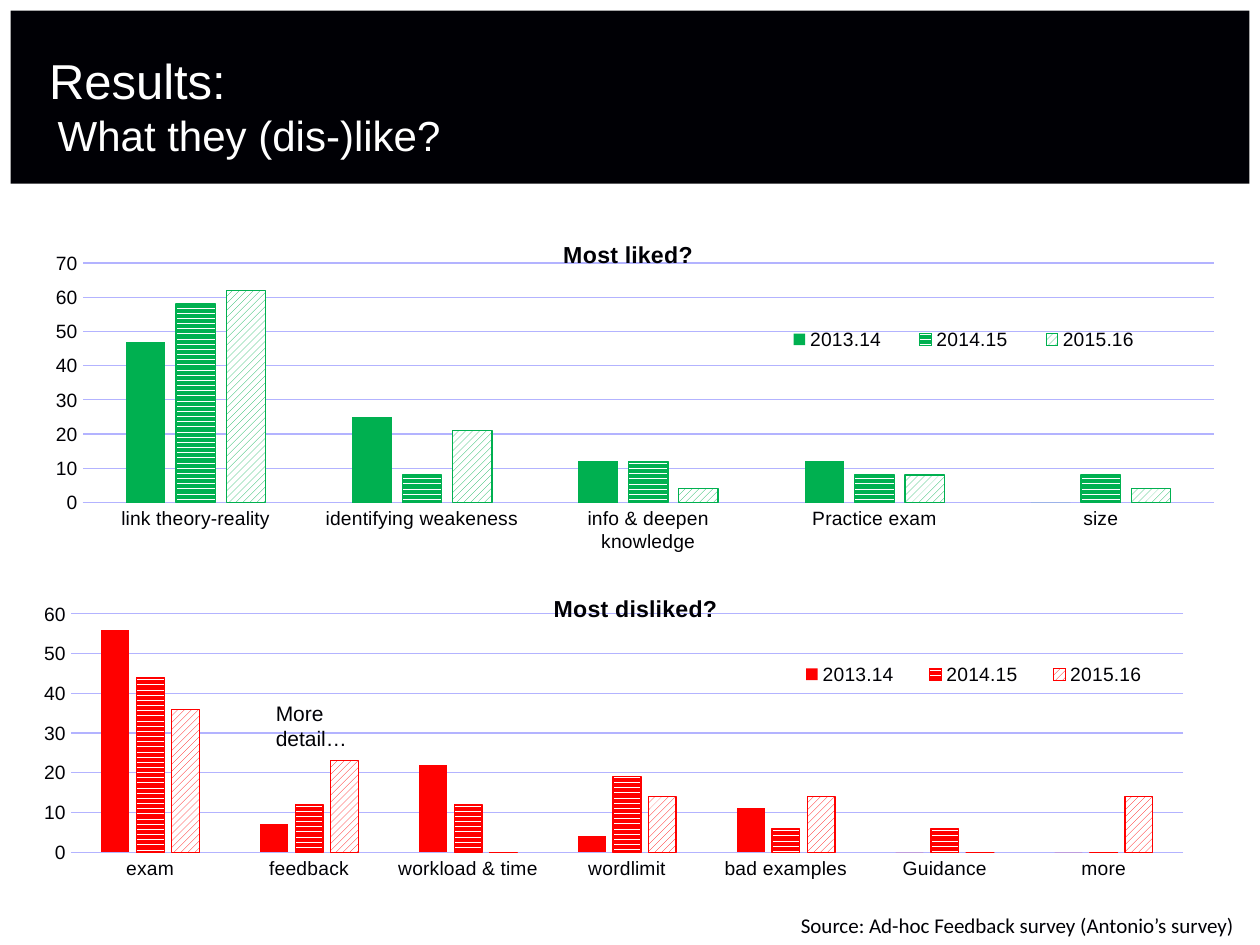
from lxml import etree
from pptx import Presentation
from pptx.chart.data import CategoryChartData
from pptx.dml.color import RGBColor
from pptx.enum import chart as ch, dml, shapes, text
from pptx.oxml.ns import qn
from pptx.util import Pt

INK = RGBColor(0x00, 0x00, 0x05)
WHITE = RGBColor(0xFF, 0xFF, 0xFF)
GRID = RGBColor(0xB3, 0xB3, 0xFF)
GREEN = RGBColor(0x00, 0xB0, 0x50)
RED = RGBColor(0xFF, 0x00, 0x00)

YEARS = ("2013.14", "2014.15", "2015.16")
PATTERNS = (None, dml.MSO_PATTERN.DARK_HORIZONTAL,
            dml.MSO_PATTERN.WIDE_UPWARD_DIAGONAL)
LIKED = {
    "link theory-reality": (47, 58, 62),
    "identifying weakeness": (25, 8, 21),
    "info & deepen knowledge": (12, 12, 4),
    "Practice exam": (12, 8, 8),
    "size": (0, 8, 4),
}
DISLIKED = {
    "exam": (56, 44, 36),
    "feedback": (7, 12, 23),
    "workload & time": (22, 12, 0),
    "wordlimit": (4, 19, 14),
    "bad examples": (11, 6, 14),
    "Guidance": (0, 6, 0),
    "more": (0, 0, 14),
}


def set_font(font, size, color=INK, name="Arial"):
    font.size, font.name = Pt(size), name
    font.color.rgb = color


def set_layout(element, index, inner=False, **fractions):
    """Place a chart part by fractions of the chart's size."""
    for old in element.findall(qn("c:layout")):
        element.remove(old)
    layout = etree.Element(qn("c:layout"))
    manual = etree.SubElement(layout, qn("c:manualLayout"))
    values = {"layoutTarget": "inner"} if inner else {}
    values.update(xMode="edge", yMode="edge", **fractions)
    for tag, value in values.items():
        etree.SubElement(manual, qn("c:" + tag)).set("val", str(value))
    element.insert(index, layout)


def add_header(s):
    title = s.shapes.title
    bar = s.shapes.add_shape(shapes.MSO_SHAPE.RECTANGLE,
                             Pt(6), Pt(6), Pt(708), Pt(99))
    bar.shadow.inherit = False
    bar.fill.solid()
    bar.fill.fore_color.rgb = INK
    bar.line.fill.background()
    title._element.addprevious(bar._element)

    title.left, title.top, title.width, title.height = (
        Pt(28), Pt(33), Pt(451), Pt(58.5))
    tf = title.text_frame
    tf.margin_left = tf.margin_top = tf.margin_right = tf.margin_bottom = 0
    tf.vertical_anchor = text.MSO_ANCHOR.BOTTOM
    tf.auto_size = text.MSO_AUTO_SIZE.NONE
    p = tf.paragraphs[0]
    p.alignment = text.PP_ALIGN.LEFT
    pPr = p._p.get_or_add_pPr()
    pPr.set("marL", str(Pt(5)))
    pPr.set("indent", str(Pt(-5)))
    r = p.add_run()
    r.text = "Results: "
    set_font(r.font, 28, WHITE)
    p.add_line_break()
    r = p.add_run()
    r.text = "What they (dis-)like?"
    set_font(r.font, 24, WHITE)


def add_text(s, words, box, wrap=True, font="Arial"):
    tf = s.shapes.add_textbox(*map(Pt, box)).text_frame
    tf.word_wrap = wrap
    tf.auto_size = text.MSO_AUTO_SIZE.SHAPE_TO_FIT_TEXT
    p = tf.paragraphs[0]
    p.text = words
    set_font(p.font, 12, name=font)
    return p


def style_axes(chart, maximum):
    for axis in (chart.category_axis, chart.value_axis):
        axis.major_tick_mark = axis.minor_tick_mark = ch.XL_TICK_MARK.NONE
        set_font(axis.tick_labels.font, 11)
    line = chart.category_axis.format.line
    line.color.rgb, line.width = GRID, Pt(0.75)
    axis = chart.value_axis
    axis.minimum_scale, axis.maximum_scale, axis.major_unit = 0, maximum, 10
    axis.tick_labels.number_format = "0"
    axis.tick_labels.number_format_is_linked = False
    axis.format.line.fill.background()
    line = axis.major_gridlines.format.line
    line.color.rgb, line.width = GRID, Pt(0.75)


def style_series(plot, color):
    plot.gap_width, plot.overlap = 219, -27
    plot.vary_by_categories = False
    for series, pattern in zip(plot.series, PATTERNS):
        series.invert_if_negative = False
        fill = series.format.fill
        if pattern is None:
            fill.solid()
            fill.fore_color.rgb = color
            continue
        fill.patterned()
        fill.pattern = pattern
        fill.fore_color.rgb, fill.back_color.rgb = color, WHITE
        line = series.format.line
        line.color.rgb, line.width = color, Pt(0.75)


def add_survey_chart(s, title, answers, color, maximum, box,
                     title_at, legend_at, plot_at):
    data = CategoryChartData(number_format="0")
    data.categories = list(answers)
    for year, values in zip(YEARS, zip(*answers.values())):
        data.add_series(year, values)
    chart = s.shapes.add_chart(ch.XL_CHART_TYPE.COLUMN_CLUSTERED,
                               *map(Pt, box), data).chart
    set_font(chart.font, 11)
    style_axes(chart, maximum)
    style_series(chart.plots[0], color)

    chart.has_title = True
    p = chart.chart_title.text_frame.paragraphs[0]
    p.text = title
    set_font(p.font, 13.2)
    p.font.bold = True
    chart.has_legend = True
    legend = chart.legend
    legend.position = ch.XL_LEGEND_POSITION.BOTTOM
    legend.include_in_layout = False
    set_font(legend.font, 11)

    set_layout(chart.chart_title._element, 1, **title_at)
    set_layout(legend._element, 1, **legend_at)
    plot_area = chart._chartSpace.chart.plotArea
    set_layout(plot_area, 0, inner=True, **plot_at)


def main():
    prs = Presentation()
    prs.slide_width, prs.slide_height = Pt(720), Pt(540)
    s = prs.slides.add_slide(prs.slide_layouts[5])
    add_header(s)
    p = add_text(s, "Source: Ad-hoc Feedback survey (Antonio’s survey)",
                 (450.5, 515.5, 265, 23), wrap=False, font="Calibri")
    p.alignment = text.PP_ALIGN.JUSTIFY
    p.line_spacing = 1.15
    add_survey_chart(s, "Most liked?", LIKED, GREEN, 70,
                     (20, 122.5, 680.5, 198.5),
                     dict(x=0.44, y=0.06),
                     dict(x=0.61, y=0.31, w=0.34, h=0.1),
                     dict(x=0.04, y=0.14, w=0.95, h=0.69))
    add_survey_chart(s, "Most disliked?", DISLIKED, RED, 60,
                     (20, 326, 683.5, 177),
                     dict(x=0.43, y=0.06),
                     dict(x=0.62, y=0.28, w=0.33, h=0.11),
                     dict(x=0.03, y=0.14, w=0.93, h=0.77))
    add_text(s, "More detail…", (150.5, 396.5, 67.5, 36))
    prs.save("out.pptx")


if __name__ == "__main__":
    main()
